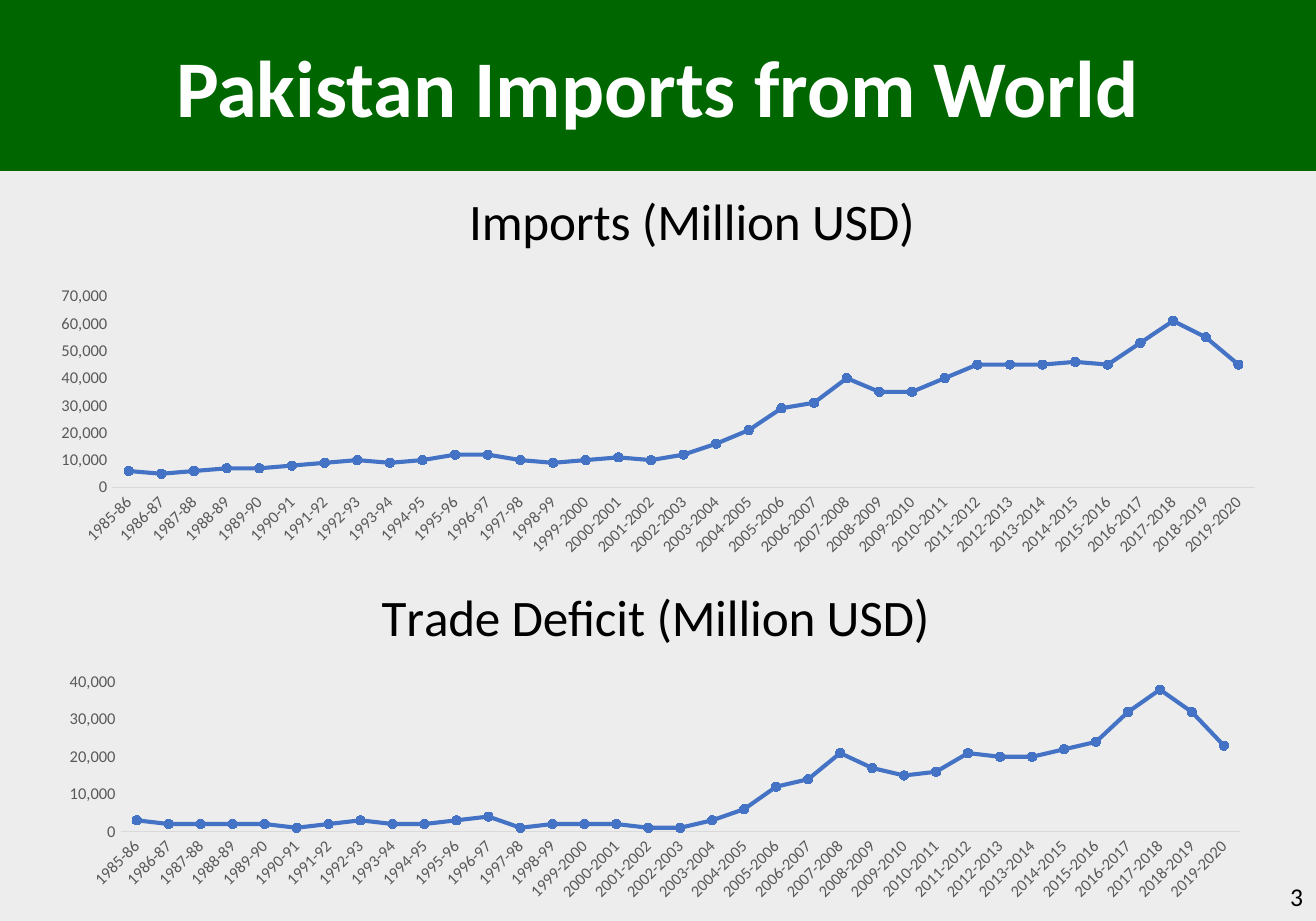
from dataclasses import dataclass

from lxml import etree
from pptx import Presentation
from pptx.chart.data import CategoryChartData
from pptx.dml.color import RGBColor
from pptx.enum.chart import XL_CHART_TYPE as ChartType, XL_MARKER_STYLE as Marker
from pptx.enum.chart import XL_TICK_MARK as TickMark
from pptx.enum.shapes import MSO_SHAPE as Shape
from pptx.enum.text import MSO_ANCHOR as Anchor, PP_ALIGN as Align
from pptx.oxml.ns import qn
from pptx.util import Inches, Pt

HEADING = "Pakistan Imports from World"
PAGE_NUMBER = "3"
FIRST_YEAR, LAST_YEAR = 1985, 2019

# Boxes are (left, top, width, height) in columns and rows of the grid;
# values are in thousands of million USD.
COLUMNS, ROWS = 100, 70
HEADING_BOX = (0, 0, 100, 13)
NUMBER_BOX = (77.5, 66.3, 22.5, 3.7)
CHARTS = [
    {
        "title": "Imports (Million USD)",
        "frame": (2.8, 13, 94.4, 29.9),
        "title_at": (34.95, 13.45),
        "plot": (8.55, 22.53, 86.8, 14.53),
        "top": 70,
        "values": [6, 5, 6, 7, 7, 8, 9, 10, 9, 10, 12, 12, 10, 9, 10, 11, 10, 12,
                   16, 21, 29, 31, 40, 35, 35, 40, 45, 45, 45, 46, 45, 53, 61,
                   55, 45],
    },
    {
        "title": "Trade Deficit (Million USD)",
        "frame": (3.4, 42.5, 92.7, 26.5),
        "title_at": (28.3, 43.55),
        "plot": (9.17, 51.85, 85.05, 11.36),
        "top": 40,
        "values": [3, 2, 2, 2, 2, 1, 2, 3, 2, 2, 3, 4, 1, 2, 2, 2, 1, 1, 3, 6,
                   12, 14, 21, 17, 15, 16, 21, 20, 20, 22, 24, 32, 38, 32, 23],
    },
]


@dataclass(frozen=True)
class Theme:
    font: str = "Calibri"
    page: str = "EDEDED"
    band: str = "006600"
    heading: str = "FFFFFF"
    text: str = "000000"
    label: str = "595959"
    axis: str = "D9D9D9"
    series: str = "4472C4"
    heading_size: int = 44
    title_size: int = 28
    number_size: int = 14
    chart_size: int = 10
    label_size: int = 9


THEME = Theme()
deck = Presentation()
deck.slide_width, deck.slide_height = Inches(10), Inches(7)


def rgb(code):
    return RGBColor.from_string(code)


def on_grid(box):
    units = (deck.slide_width / COLUMNS, deck.slide_height / ROWS) * 2
    return [round(length * unit) for length, unit in zip(box, units)]


def style(font, size, color, bold=False):
    font.name, font.size, font.bold = THEME.font, Pt(size), bold
    font.color.rgb = rgb(color)


def fill_text(box, text, align, size, color, bold=False):
    frame = box.text_frame
    frame.text = text
    frame.word_wrap = True
    frame.vertical_anchor = Anchor.MIDDLE
    para = frame.paragraphs[0]
    para.alignment = align
    style(para.runs[0].font, size, color, bold)


def year_label(year):
    """Short form until the century turns, then both years in full."""
    return f"{year}-{year + 1 if year >= 1999 else (year + 1) % 100}"


def place(parent, index, box, frame, inner=False):
    """Give a chart part a manual layout, as shares of the chart frame."""
    old = parent.find(qn("c:layout"))
    if old is not None:
        parent.remove(old)
    layout = etree.Element(qn("c:layout"))
    manual = etree.SubElement(layout, qn("c:manualLayout"))
    settings = [("layoutTarget", "inner")] if inner else []
    settings += [("xMode", "edge"), ("yMode", "edge")]
    left, top, width, height = frame
    settings += [("x", (box[0] - left) / width), ("y", (box[1] - top) / height)]
    if inner:
        settings += [("w", box[2] / width), ("h", box[3] / height)]
    for name, value in settings:
        etree.SubElement(manual, qn(f"c:{name}")).set("val", str(value))
    parent.insert(index, layout)


def style_axes(chart, top):
    years, amounts = chart.category_axis, chart.value_axis
    for axis in (years, amounts):
        axis.has_major_gridlines = False
        axis.major_tick_mark = axis.minor_tick_mark = TickMark.NONE
        style(axis.tick_labels.font, THEME.label_size, THEME.label)
    years.format.line.color.rgb = rgb(THEME.axis)
    years.format.line.width = Pt(0.75)
    slant = years._element.find(qn("c:txPr")).find(qn("a:bodyPr"))
    slant.set("rot", str(-45 * 60000))
    slant.set("vert", "horz")
    amounts.format.line.fill.background()
    amounts.minimum_scale, amounts.maximum_scale = 0, top * 1000
    amounts.major_unit = 10000
    amounts.tick_labels.number_format = "#,##0"
    amounts.tick_labels.number_format_is_linked = False


def style_series(plot):
    plot.vary_by_categories = False
    series = plot.series[0]
    series.smooth = False
    series.format.line.color.rgb = rgb(THEME.series)
    series.format.line.width = Pt(2.25)
    series.marker.style, series.marker.size = Marker.CIRCLE, 5
    series.marker.format.fill.solid()
    series.marker.format.fill.fore_color.rgb = rgb(THEME.series)
    series.marker.format.line.color.rgb = rgb(THEME.series)


def add_line_chart(page, item):
    data = CategoryChartData()
    data.categories = [year_label(y) for y in range(FIRST_YEAR, LAST_YEAR + 1)]
    data.add_series("Series 1", [value * 1000 for value in item["values"]])
    frame = item["frame"]
    chart = page.shapes.add_chart(
        ChartType.LINE_MARKERS, *on_grid(frame), data).chart
    style(chart.font, THEME.chart_size, THEME.text)
    chart.has_legend = False
    chart.has_title = True
    title = chart.chart_title
    title.text_frame.text = item["title"]
    style(title.text_frame.paragraphs[0].runs[0].font,
          THEME.title_size, THEME.text)
    title.include_in_layout = False
    place(title._element, 1, item["title_at"], frame)
    place(chart._chartSpace.chart.plotArea, 0, item["plot"], frame, inner=True)
    style_axes(chart, item["top"])
    style_series(chart.plots[0])


def main():
    page = deck.slides.add_slide(deck.slide_layouts[6])
    page.background.fill.solid()
    page.background.fill.fore_color.rgb = rgb(THEME.page)

    band = page.shapes.add_shape(Shape.RECTANGLE, *on_grid(HEADING_BOX))
    band.shadow.inherit = False
    band.fill.solid()
    band.fill.fore_color.rgb = rgb(THEME.band)
    band.line.fill.background()
    fill_text(band, HEADING, Align.CENTER,
              THEME.heading_size, THEME.heading, bold=True)

    for item in CHARTS:
        add_line_chart(page, item)

    number = page.shapes.add_textbox(*on_grid(NUMBER_BOX))
    fill_text(number, PAGE_NUMBER, Align.RIGHT, THEME.number_size, THEME.text)
    deck.save("out.pptx")


if __name__ == "__main__":
    main()
